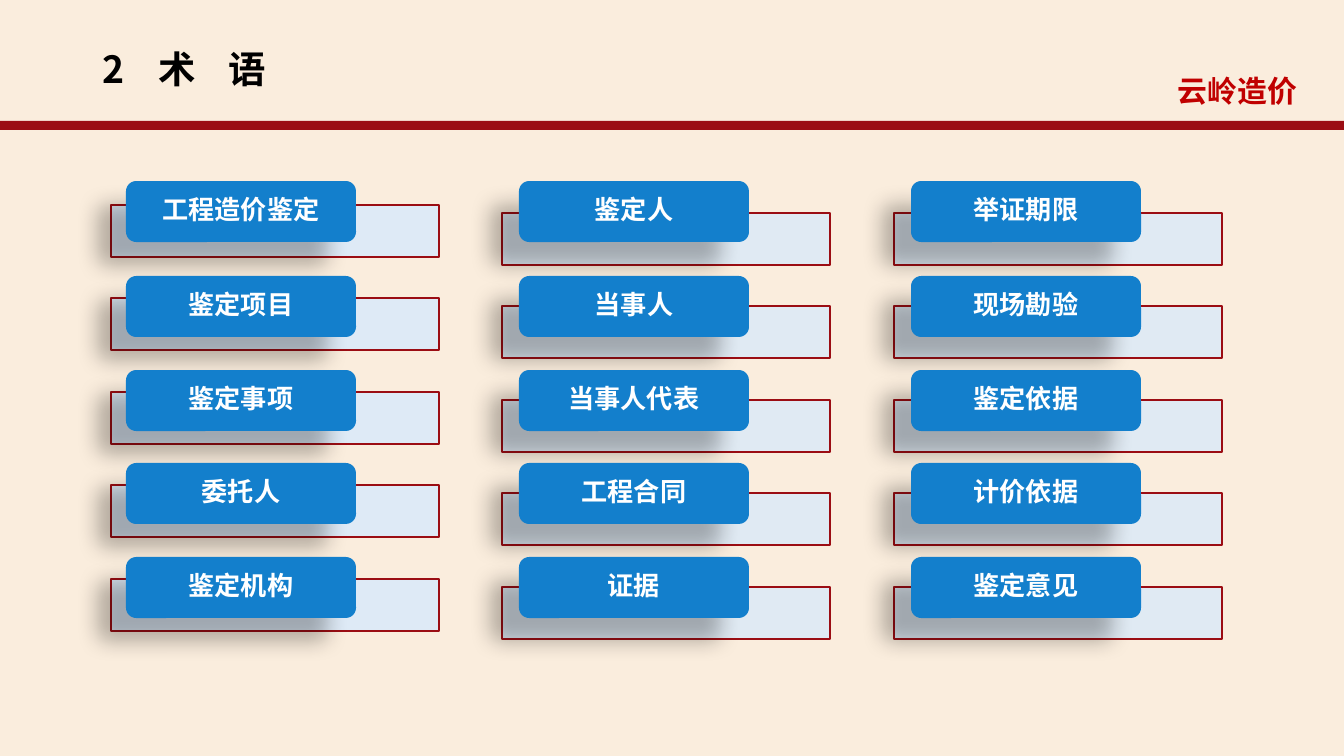
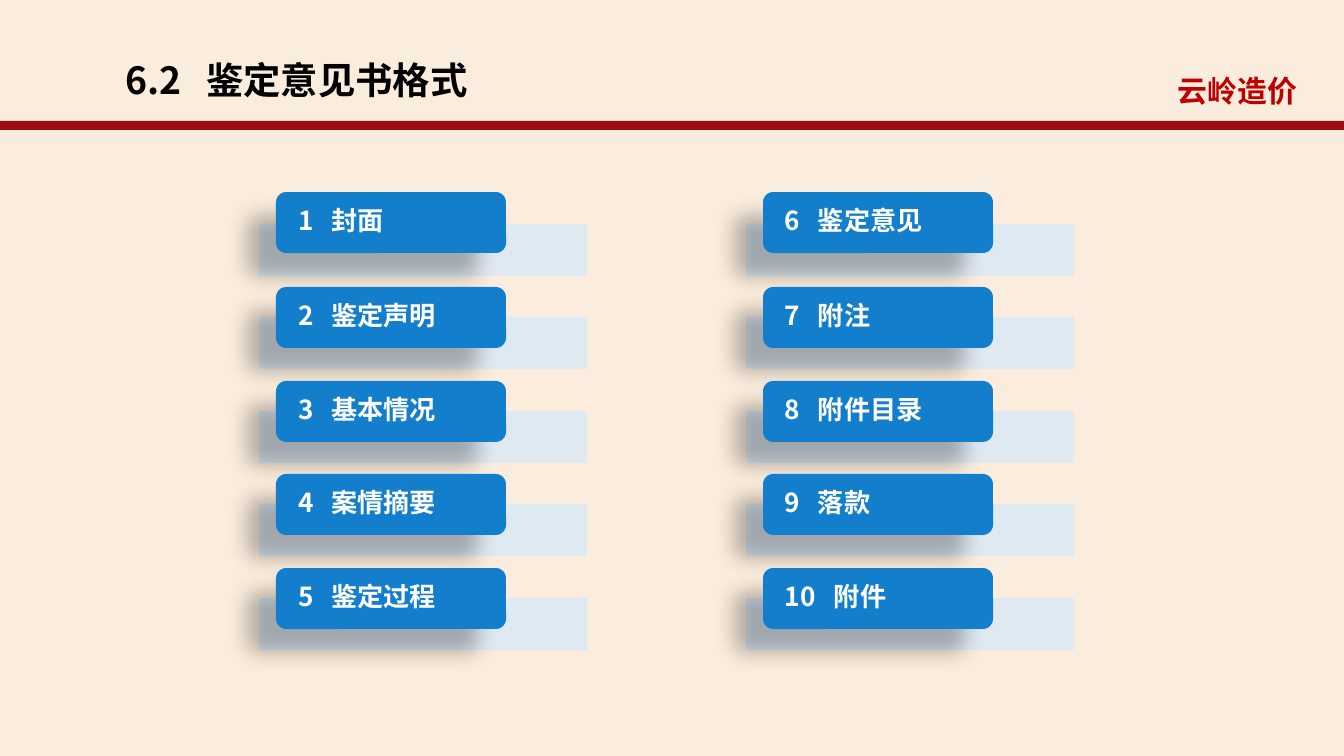
from dataclasses import dataclass

from lxml import etree
from pptx import Presentation
from pptx.dml.color import RGBColor
from pptx.enum.shapes import MSO_SHAPE
from pptx.enum.text import MSO_ANCHOR, MSO_AUTO_SIZE, PP_ALIGN
from pptx.oxml.ns import qn
from pptx.util import Emu, Pt

RECTANGLE = MSO_SHAPE.RECTANGLE
ROUNDED = MSO_SHAPE.ROUNDED_RECTANGLE
LEFT, CENTER = PP_ALIGN.LEFT, PP_ALIGN.CENTER
TOP, MIDDLE = MSO_ANCHOR.TOP, MSO_ANCHOR.MIDDLE
GROW, FIXED = MSO_AUTO_SIZE.SHAPE_TO_FIT_TEXT, MSO_AUTO_SIZE.NONE

PX_PER_INCH = 134.4
PAGE_WIDTH, PAGE_HEIGHT = 1344, 756
BAR_WIDTH, BAR_HEIGHT = 328, 52
BOX_WIDTH, BOX_HEIGHT = 230, 61
LABEL_INSET = 3
LABEL_MARGIN, NUMBER_MARGIN = 8, 19
DIGIT_WIDTH, NUMBER_GAP = 16, 17
ROWS, ROWS_SPAN = 5, 374
FIRST_BOX_LIFT = 2


@dataclass(frozen=True)
class Theme:
    """Colours, fonts and type sizes."""

    paper: str = "FAEDDD"
    band: str = "9B0D13"
    brand: str = "C00000"
    title: str = "000000"
    box: str = "137FCC"
    label: str = "FFFFFF"
    shadow: str = "000000"
    font: str = "Noto Sans CJK SC"
    brand_font: str = "Noto Sans CJK JP"
    title_size: int = 20
    brand_size: int = 16
    label_size: int = 14


@dataclass(frozen=True)
class Area:
    """Rectangle in px."""

    left: int
    top: int
    width: int
    height: int


@dataclass(frozen=True)
class TextStyle:
    """Look of one line of text."""

    size: int
    color: str
    font: str
    align: PP_ALIGN = LEFT
    anchor: MSO_ANCHOR = TOP
    grow: bool = True
    wrap: bool = True
    margins: tuple[int, int] = (13, 7)
    label_spacing: bool = False


@dataclass(frozen=True)
class Column:
    """Stack of labelled boxes, each over a pale bar."""

    bar_left: int
    bar_top: int
    box_left: int
    box_top: int
    labels: tuple[str, ...]
    bar_color: str = "DEEAF6"
    bar_opacity: int = 90
    outlined: bool = True
    numbered: bool = False


@dataclass(frozen=True)
class PagePlan:
    """Title and columns of one page."""

    title: str
    title_area: Area
    title_tabs: tuple[int, ...]
    title_wrap: bool
    columns: tuple[Column, ...]


THEME = Theme()
BAND = Area(0, 121, PAGE_WIDTH, 9)
BRAND = Area(1158, 66, 159, 50)

PAGES = (
    PagePlan("2\t术\t语", Area(90, 39, 292, 59), (56, 126), True, (
        Column(111, 205, 126, 183, ("工程造价鉴定", "鉴定项目", "鉴定事项", "委托人", "鉴定机构"),
               bar_opacity=100),
        Column(502, 213, 519, 183, ("鉴定人", "当事人", "当事人代表", "工程合同", "证据")),
        Column(894, 213, 911, 183, ("举证期限", "现场勘验", "鉴定依据", "计价依据", "鉴定意见")),
    )),
    PagePlan("6.2\t鉴定意见书格式", Area(112, 50, 371, 59), (81,), False, (
        Column(259, 224, 276, 194,
               ("1\t封面", "2\t鉴定声明", "3\t基本情况", "4\t案情摘要", "5\t鉴定过程"),
               "DDE9F5", outlined=False, numbered=True),
        Column(746, 224, 763, 194,
               ("6\t鉴定意见", "7\t附注", "8\t附件目录", "9\t落款", "10\t附件"),
               "DDE9F5", outlined=False, numbered=True),
    )),
)


def px(length: int) -> Emu:
    """Turn px into EMU."""
    return Emu(round(length * 914400 / PX_PER_INCH))


def place(area: Area) -> tuple[Emu, Emu, Emu, Emu]:
    """Give the area as four EMU lengths."""
    return px(area.left), px(area.top), px(area.width), px(area.height)


def add_box(shapes, kind: MSO_SHAPE, area: Area, color: str):
    """Add a filled shape without line or shadow."""
    box = shapes.add_shape(kind, *place(area))
    box.shadow.inherit = False
    box.fill.solid()
    box.fill.fore_color.rgb = RGBColor.from_string(color)
    box.line.fill.background()
    return box


def set_opacity(box, percent: int) -> None:
    """Make the fill of a box partly transparent."""
    color = box._element.spPr.find(f"{qn('a:solidFill')}/{qn('a:srgbClr')}")
    etree.SubElement(color, qn("a:alpha"), val=str(percent * 1000))


def cast_shadow(box) -> None:
    """Give a box a soft shadow to the lower left."""
    effects = box._element.spPr.find(qn("a:effectLst"))
    shadow = etree.SubElement(
        effects, qn("a:outerShdw"), blurRad=str(Pt(11.8)), dist=str(Pt(19.7)),
        dir=str(141 * 60000), algn="ctr", rotWithShape="0")
    color = etree.SubElement(shadow, qn("a:srgbClr"), val=THEME.shadow)
    etree.SubElement(color, qn("a:alpha"), val="28000")


def add_text(shapes, area: Area, text: str, style: TextStyle,
             tabs: tuple[int, ...] = ()) -> None:
    """Add one line of bold text with its tab stops."""
    frame = shapes.add_textbox(*place(area)).text_frame
    frame.word_wrap = style.wrap
    frame.auto_size = GROW if style.grow else FIXED
    frame.vertical_anchor = style.anchor
    side, edge = map(px, style.margins)
    frame.margin_left = frame.margin_right = side
    frame.margin_top = frame.margin_bottom = edge
    para = frame.paragraphs[0]
    para.alignment = style.align
    properties = para._p.get_or_add_pPr()
    if style.label_spacing:
        para.line_spacing = 0.9
        after = etree.SubElement(properties, qn("a:spcAft"))
        etree.SubElement(after, qn("a:spcPct"), val="35000")
    if tabs:
        stops = etree.SubElement(properties, qn("a:tabLst"))
        for stop in tabs:
            etree.SubElement(stops, qn("a:tab"), pos=str(px(stop)), algn="l")
    span = para.add_run()
    span.text = text
    span.font.size = Pt(style.size)
    span.font.bold = True
    span.font.color.rgb = RGBColor.from_string(style.color)
    span.font.name = style.font
    etree.SubElement(span._r.get_or_add_rPr(), qn("a:ea"), typeface=style.font)


def draw_column(page, column: Column) -> None:
    """Draw a column as one group of bars, boxes and labels."""
    shapes = page.shapes.add_group_shape().shapes
    style = TextStyle(
        THEME.label_size, THEME.label, THEME.font,
        LEFT if column.numbered else CENTER, MIDDLE, grow=False,
        margins=(NUMBER_MARGIN if column.numbered else LABEL_MARGIN, 0),
        label_spacing=True)
    for row, label in enumerate(column.labels):
        shift = row * ROWS_SPAN // (ROWS - 1)
        bar = add_box(shapes, RECTANGLE, Area(
            column.bar_left, column.bar_top + shift, BAR_WIDTH, BAR_HEIGHT), column.bar_color)
        if column.bar_opacity < 100:
            set_opacity(bar, column.bar_opacity)
        if column.outlined:
            bar.line.color.rgb = RGBColor.from_string(THEME.band)
            bar.line.width = Pt(0.75)
        top = column.box_top + shift - (FIRST_BOX_LIFT if row == 0 else 0)
        cast_shadow(add_box(shapes, ROUNDED, Area(
            column.box_left, top, BOX_WIDTH, BOX_HEIGHT), THEME.box))
        digits = len(label.split("\t")[0])
        tabs = (digits * DIGIT_WIDTH + NUMBER_GAP,) if column.numbered else ()
        add_text(shapes, Area(
            column.box_left + LABEL_INSET, top + LABEL_INSET,
            BOX_WIDTH - 2 * LABEL_INSET, BOX_HEIGHT - 2 * LABEL_INSET), label, style, tabs)


def draw_page(deck, plan: PagePlan) -> None:
    """Draw one page with its band, brand, title and columns."""
    page = deck.slides.add_slide(deck.slide_layouts[6])
    add_box(page.shapes, RECTANGLE, BAND, THEME.band)
    add_text(page.shapes, BRAND, "云岭造价",
             TextStyle(THEME.brand_size, THEME.brand, THEME.brand_font, CENTER))
    add_text(page.shapes, plan.title_area, plan.title,
             TextStyle(THEME.title_size, THEME.title, THEME.font, wrap=plan.title_wrap),
             plan.title_tabs)
    for column in plan.columns:
        draw_column(page, column)


def main() -> None:
    """Build and save the deck."""
    deck = Presentation()
    deck.slide_width, deck.slide_height = px(PAGE_WIDTH), px(PAGE_HEIGHT)
    paper = deck.slide_master.background.fill
    paper.solid()
    paper.fore_color.rgb = RGBColor.from_string(THEME.paper)
    for plan in PAGES:
        draw_page(deck, plan)
    deck.save("out.pptx")


if __name__ == "__main__":
    main()
